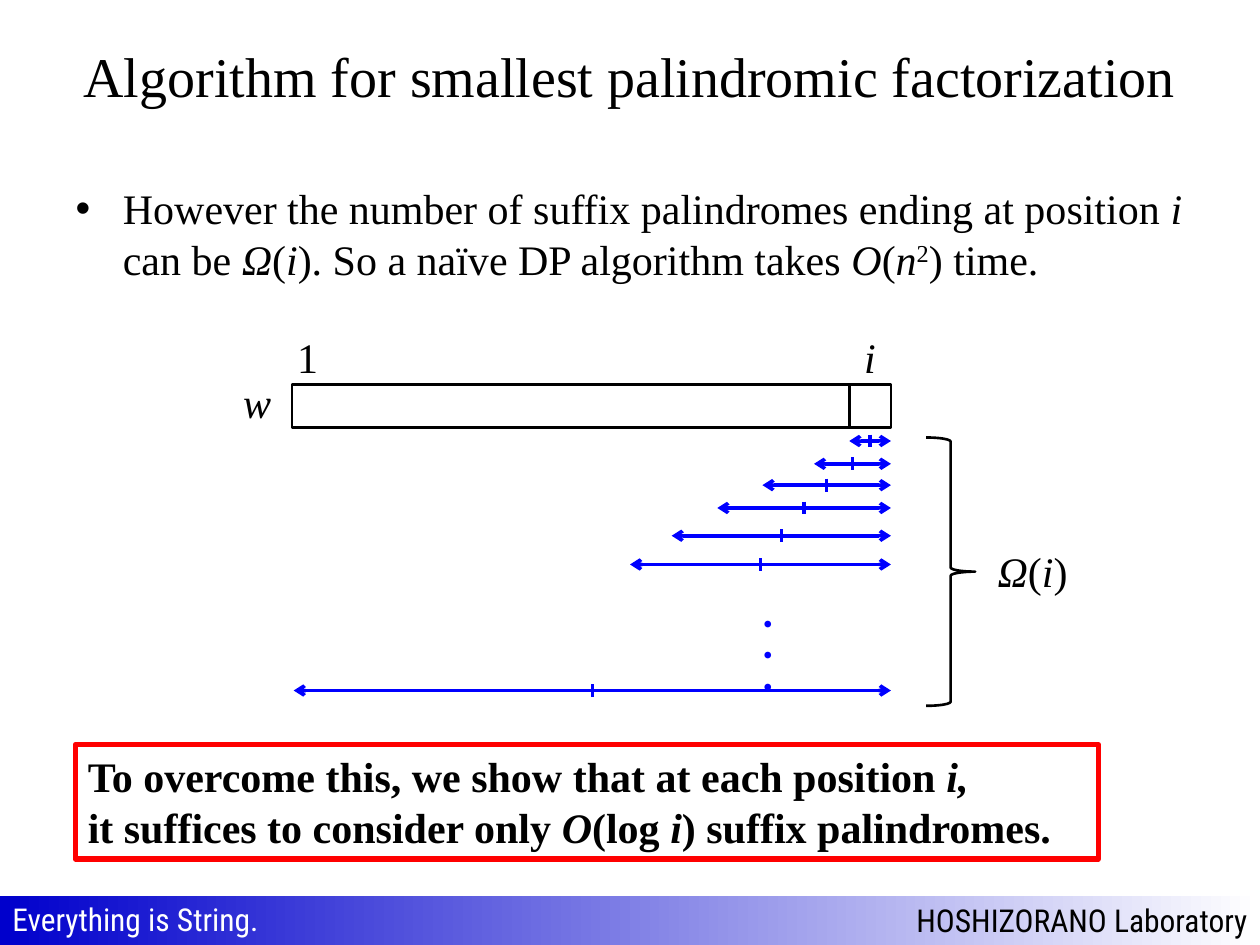
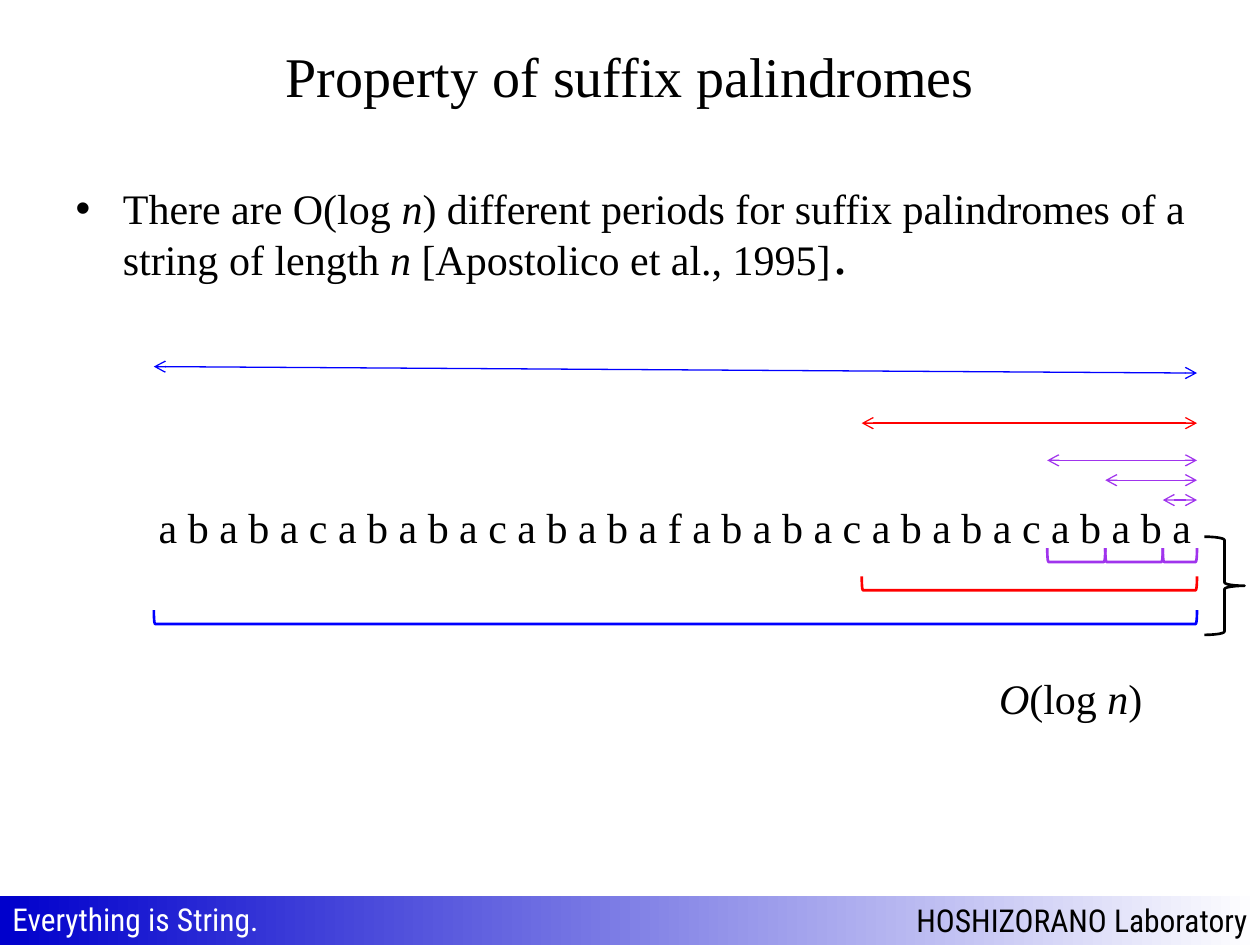
import dataclasses

import lxml.etree
import pptx
import pptx.dml.color
import pptx.enum.shapes
import pptx.enum.text
import pptx.oxml.ns
import pptx.util

Cm = pptx.util.Cm
Pt = pptx.util.Pt
Shape = pptx.enum.shapes.MSO_SHAPE
Anchor = pptx.enum.text.MSO_ANCHOR
Align = pptx.enum.text.PP_ALIGN


@dataclasses.dataclass(frozen=True)
class Theme:
    black: str = "000000"
    white: str = "FFFFFF"
    blue: str = "0000FF"
    red: str = "FF0000"
    purple: str = "A034ED"
    band: str = "0000CC"
    serif: str = "Times New Roman"
    sans: str = "Arial"
    condensed: str = "Roboto Condensed"
    title_size: int = 32
    text_size: int = 24
    small_size: int = 18
    outline: float = 1.5


@dataclasses.dataclass(frozen=True)
class Box:
    left: float
    top: float
    width: float
    height: float

    def inner(self, left, top, width, height):
        return Box(self.left + left, self.top + top, width, height)

    def lengths(self):
        return Cm(self.left), Cm(self.top), Cm(self.width), Cm(self.height)


THEME = Theme()


def rgb(color):
    return pptx.dml.color.RGBColor.from_string(color)


def write(paragraph, text, size=THEME.text_size, font=THEME.serif, color=THEME.black, bold=None):
    for line_number, line in enumerate(text.split("\n")):
        if line_number:
            paragraph.add_line_break()
        for index, piece in enumerate(line.split("*")):
            if not piece:
                continue
            run = paragraph.add_run()
            run.text = piece
            run.font.size = Pt(size)
            run.font.name = font
            run.font.color.rgb = rgb(color)
            run.font.bold = bold
            run.font.italic = index % 2 == 1


def add_text(slide, box, text, **style):
    shape = slide.shapes.add_textbox(*box.lengths())
    shape.text_frame.word_wrap = False
    shape.text_frame.auto_size = pptx.enum.text.MSO_AUTO_SIZE.SHAPE_TO_FIT_TEXT
    write(shape.text_frame.paragraphs[0], text, **style)
    return shape


def set_outline(shape, color, width=THEME.outline):
    shape.line.color.rgb = rgb(color)
    shape.line.width = Pt(width)


def add_outline(slide, kind, box, color=THEME.black, rotation=0):
    shape = slide.shapes.add_shape(kind, *box.lengths())
    shape.shadow.inherit = False
    shape.fill.background()
    shape.rotation = rotation
    set_outline(shape, color)
    return shape


def add_line(slide, start, end, color, width, arrows=False):
    points = [Cm(value) for value in (*start, *end)]
    line = slide.shapes.add_connector(pptx.enum.shapes.MSO_CONNECTOR.STRAIGHT, *points)
    set_outline(line, color, width)
    qualified = pptx.oxml.ns.qn
    properties = line.element.find(qualified("p:spPr"))
    if arrows:
        outline = properties.find(qualified("a:ln"))
        for end_name in ("a:headEnd", "a:tailEnd"):
            lxml.etree.SubElement(outline, qualified(end_name), type="arrow")
    lxml.etree.SubElement(properties, qualified("a:effectLst"))


def move_footer_to_master(slide, master, box):
    band = slide.shapes.add_shape(Shape.RECTANGLE, *box.lengths())
    band.shadow.inherit = False
    band.line.fill.background()
    band.fill.gradient()
    band.fill.gradient_angle = 0
    for stop, color in zip(band.fill.gradient_stops, (THEME.band, THEME.white)):
        stop.color.rgb = rgb(color)
    band.text_frame.word_wrap = False
    band.text_frame.vertical_anchor = Anchor.MIDDLE
    laboratory = band.text_frame.paragraphs[0]
    laboratory.alignment = Align.RIGHT
    write(laboratory, "HOSHIZORANO Laboratory", THEME.small_size, THEME.condensed)
    motto = add_text(slide, box.inner(0, -0.05, 5.64, 1.02), "Everything is String.",
                     size=THEME.small_size, font=THEME.condensed, color=THEME.white)
    for shape in (band, motto):
        master.shapes.element.append(shape.element)


def fill_placeholder(shape, box, text, size, anchor, alignment):
    shape.left, shape.top, shape.width, shape.height = box.lengths()
    frame = shape.text_frame
    frame.auto_size = pptx.enum.text.MSO_AUTO_SIZE.NONE
    frame.vertical_anchor = anchor
    paragraph = frame.paragraphs[0]
    paragraph.alignment = alignment
    write(paragraph, text, size)
    return paragraph


def add_content_slide(presentation, title, body):
    slide = presentation.slides.add_slide(presentation.slide_layouts[1])
    fill_placeholder(slide.shapes.title, Box(1.27, 0.33, 22.86, 2.36), title,
                     THEME.title_size, Anchor.MIDDLE, Align.CENTER)
    paragraph = fill_placeholder(slide.placeholders[1], Box(1.27, 3.56, 23.29, 13.46), body,
                                 THEME.text_size, Anchor.TOP, Align.LEFT)
    return slide, paragraph


def add_palindrome_arrow(slide, right, y, length):
    left = right - length
    middle = right - length / 2
    add_line(slide, (left, y), (right, y), THEME.blue, 2, arrows=True)
    add_line(slide, (middle, y - 0.13), (middle, y + 0.13), THEME.blue, 2)


def draw_suffix_diagram(slide, box):
    right = box.left + box.width
    cell_left = right - 0.84
    add_outline(slide, Shape.RECTANGLE, box)
    add_line(slide, (cell_left, box.top), (cell_left, box.top + box.height),
             THEME.black, THEME.outline)
    add_text(slide, box.inner(-1.24, -0.28, 1.14, 1.27), "*w*")
    add_text(slide, box.inner(-0.15, -1.19, 0.94, 1.27), "1")
    add_text(slide, box.inner(11.28, -1.19, 0.81, 1.27), "*i*")

    palindromes = [(1.14, 0.84), (1.6, 1.55), (2.03, 2.59), (2.49, 3.5),
                   (3.05, 4.42), (3.63, 5.26), (6.17, 12.04)]
    for offset, length in palindromes:
        add_palindrome_arrow(slide, right, box.top + offset, length)

    dots = add_text(slide, box.inner(8.82, 4.27, 1.27, 1.22), "・・・",
                    size=THEME.small_size, font=THEME.sans, color=THEME.blue)
    dots.text_frame._txBody.bodyPr.set("vert", "eaVert")
    add_outline(slide, Shape.RIGHT_BRACE, box.inner(12.78, 1.07, 0.99, 5.41))
    add_text(slide, box.inner(13.97, 3.12, 2.01, 1.27), "*Ω*(*i*)")


def draw_conclusion(slide, box):
    conclusion = add_text(
        slide, box,
        "To overcome this, we show that at each position *i,*\n"
        "it suffices to consider only *O*(log *i*) suffix palindromes.", bold=True)
    conclusion.text_frame.paragraphs[0].space_before = Pt(4.8)
    set_outline(conclusion, THEME.red, 3)


def draw_period_group(slide, box, color, lengths, arrow_top, bracket_middle, slope=0):
    right = box.left + box.width
    thickness = 0.28
    previous = 0
    for index, length in enumerate(lengths):
        y = box.top + arrow_top - index * 0.4
        add_line(slide, (right - length, y), (right, y + slope), color, 0.75, arrows=True)
        span = length - previous
        middle = box.width - (length + previous) / 2
        bracket = box.inner(middle - thickness / 2, bracket_middle - span / 2, thickness, span)
        add_outline(slide, Shape.RIGHT_BRACKET, bracket, color, rotation=90)
        previous = length


def draw_period_diagram(slide, box):
    word = " ".join("ababacababacababafababacababacababa")
    add_text(slide, box.inner(-0.15, 2.59, 21.56, 1.27), word)
    draw_period_group(slide, box, THEME.purple, [0.69, 1.85, 3.02], 2.69, 3.8)
    draw_period_group(slide, box, THEME.red, [6.76], 1.14, 4.37)
    draw_period_group(slide, box, THEME.blue, [box.width], 0, 5.05, slope=0.13)
    draw_period_diagram_tail(slide, box)


def draw_period_diagram_tail(slide, box):
    add_outline(slide, Shape.RIGHT_BRACE, box.inner(21.18, 3.43, 0.81, 1.98))
    add_text(slide, box.inner(16.79, 6.05, 3.51, 1.27), "*O*(log* n*)")


def main():
    presentation = pptx.Presentation()
    presentation.slide_width = Cm(25.4)
    presentation.slide_height = Cm(19.05)

    slide, paragraph = add_content_slide(
        presentation, "Algorithm for smallest palindromic factorization",
        "However the number of suffix palindromes ending at position *i *can be "
        "*Ω*(*i*). So a naïve DP algorithm takes *O*(*n*2**) time.")
    exponent = next(run for run in paragraph.runs if run.text == "2")
    exponent.font._element.set("baseline", "30000")
    move_footer_to_master(slide, presentation.slide_master, Box(0, 18.06, 25.4, 0.99))
    draw_suffix_diagram(slide, Box(5.89, 7.75, 12.07, 0.87))
    draw_conclusion(slide, Box(1.52, 15.01, 20.62, 2.31))

    slide, paragraph = add_content_slide(
        presentation, "Property of suffix palindromes",
        "There are O(log *n*) different periods for suffix palindromes of a string "
        "of length *n *[Apostolico et al., 1995]．")
    draw_period_diagram(slide, Box(3.1, 7.39, 21.03, 5.2))

    presentation.save("out.pptx")


if __name__ == "__main__":
    main()
